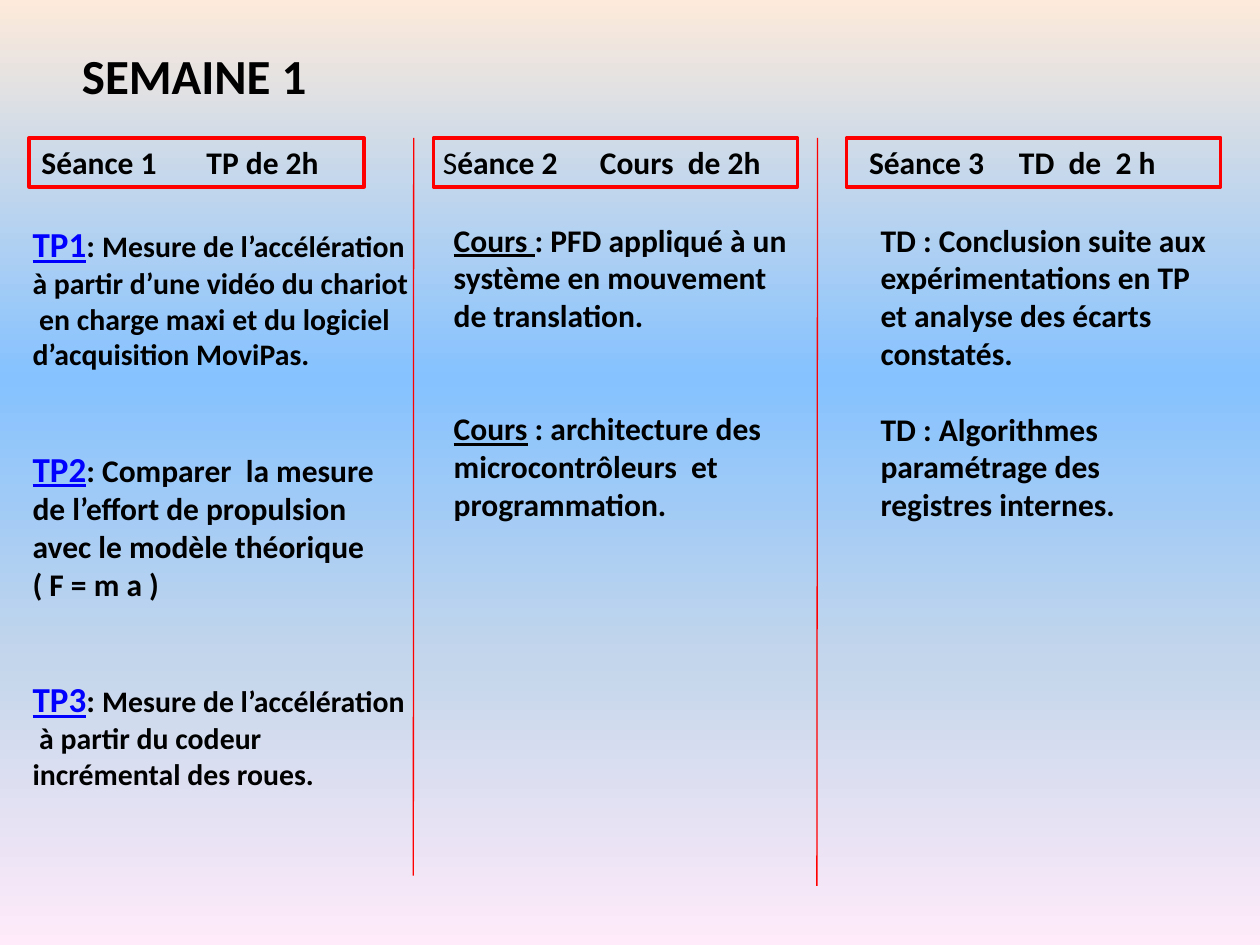
"""Build the week 1 planning slide with its three session columns."""
from lxml.etree import SubElement
from pptx import Presentation
from pptx.dml.color import RGBColor
from pptx.enum.shapes import MSO_CONNECTOR, MSO_SHAPE
from pptx.enum.text import MSO_ANCHOR, MSO_AUTO_SIZE, PP_ALIGN
from pptx.oxml.ns import qn
from pptx.util import Pt

COLORS = {"text": "000000", "link": "0000FF", "frame": "FF0000"}
GRADIENT = [(0, "FDEADA"), (40, "85C2FF"), (70, "C4D6EB"), (100, "FFEBFA")]
HEADER_TOP, HEADER_HEIGHT = 78.8, 28


def add_run(paragraph, text, size=18, color="text", bold=True, underline=False):
    if text == "\n":
        paragraph.add_line_break()
        return
    run = paragraph.add_run()
    run.text = text
    run.font.name = "Calibri"
    run.font.size = Pt(size)
    run.font.bold = bold
    run.font.underline = underline
    run.font.color.rgb = RGBColor.from_string(COLORS[color])


def set_frame(shape, anchor, wrap=True, left_margin=7.2):
    frame = shape.text_frame
    frame.auto_size = MSO_AUTO_SIZE.NONE
    frame.word_wrap = wrap
    frame.vertical_anchor = anchor
    frame.margin_left = Pt(left_margin)
    frame.margin_right = Pt(7.2)
    frame.margin_top = frame.margin_bottom = Pt(3.6)
    frame.paragraphs[0].alignment = PP_ALIGN.LEFT
    return frame


presentation = Presentation()
presentation.slide_width, presentation.slide_height = Pt(720), Pt(540)
slide = presentation.slides.add_slide(presentation.slide_layouts[5])

background = slide.background.fill
background.gradient()
background.gradient_angle = 270
stops = slide.element.find(".//" + qn("a:gsLst"))
for stop in list(stops):
    stops.remove(stop)
for position, color in GRADIENT:
    stop = SubElement(stops, qn("a:gs"), pos=str(position * 1000))
    SubElement(stop, qn("a:srgbClr"), val=color)

title = slide.shapes.title
title.left, title.top, title.width, title.height = Pt(39.6), Pt(22.3), Pt(168.5), Pt(41)
title_frame = set_frame(title, MSO_ANCHOR.TOP, wrap=False)
add_run(title_frame.paragraphs[0], "SEMAINE 1", 28)

link = {"size": 20, "color": "link", "underline": True}
small = {"size": 17}
heading = {"underline": True}
columns = [
    {
        "header": (16.6, 191.5, 7.2, 94.3),
        "header_runs": [("Séance 1\tTP de 2h", {})],
        "body": (11.5, 123.8, 229.7, 357),
        "paragraphs": [
            (0, [("TP1", link), (": ", {}),
                 ("Mesure de l’accélération à partir d’une vidéo du chariot", small),
                 ("\n", {}),
                 (" en charge maxi et du logiciel d’acquisition MoviPas.", small)]),
            (43, [("TP2", link), (": Comparer  la mesure de l’effort de propulsion", {}),
                  ("\n", {}), ("avec le modèle théorique", {})]),
            (0, [("( F = m a )", {})]),
            (43, [("TP3", link), (": ", {}), ("Mesure de l’accélération", small),
                  ("\n", {}),
                  (" à partir du codeur incrémental des roues.", small)]),
        ],
    },
    {
        "header": (247.7, 208, 5.4, 89.7),
        "header_runs": [("S", {"bold": False}), ("éance 2\tCours  de 2h", {})],
        "body": (252.2, 122.6, 213.8, 203.8),
        "paragraphs": [
            (0, [("Cours ", heading),
                 (": PFD appliqué à un système en mouvement de translation.", {})]),
            (43, [("Cours", heading),
                  (" : architecture des microcontrôleurs  et programmation.", {})]),
        ],
    },
    {
        "header": (483.8, 213.8, 12.8, 85.7),
        "header_runs": [("Séance 3\tTD  de  2 h", {})],
        "body": (496.1, 122.6, 202.3, 203.8),
        "paragraphs": [
            (0, [("TD : Conclusion suite aux expérimentations en TP "
                  "et analyse des écarts constatés.", {})]),
            (21.5, [("TD : Algorithmes", {})]),
            (0, [("paramétrage des registres internes.", {})]),
        ],
    },
]

for column in columns:
    left, width, margin, tab = column["header"]
    header = slide.shapes.add_shape(
        MSO_SHAPE.RECTANGLE, Pt(left), Pt(HEADER_TOP), Pt(width), Pt(HEADER_HEIGHT))
    header.shadow.inherit = False
    header.fill.background()
    header.line.color.rgb = RGBColor.from_string(COLORS["frame"])
    header.line.width = Pt(2)
    paragraph = set_frame(header, MSO_ANCHOR.MIDDLE, left_margin=margin).paragraphs[0]
    tabs = SubElement(paragraph._p.get_or_add_pPr(), qn("a:tabLst"))
    SubElement(tabs, qn("a:tab"), pos=str(int(Pt(tab))), algn="l")
    for text, style in column["header_runs"]:
        add_run(paragraph, text, **style)

    body = slide.shapes.add_textbox(*[Pt(length) for length in column["body"]])
    frame = set_frame(body, MSO_ANCHOR.TOP)
    for index, (gap, runs) in enumerate(column["paragraphs"]):
        paragraph = frame.add_paragraph() if index else frame.paragraphs[0]
        paragraph.space_before = Pt(gap)
        for text, style in runs:
            add_run(paragraph, text, **style)

for top_x, bottom_x, bottom in [(236.4, 236.2, 500.4), (467.2, 466.8, 506.2)]:
    separator = slide.shapes.add_connector(
        MSO_CONNECTOR.STRAIGHT, Pt(top_x), Pt(HEADER_TOP), Pt(bottom_x), Pt(bottom))
    separator.line.color.rgb = RGBColor.from_string(COLORS["frame"])
    separator.line.width = Pt(0.75)
    SubElement(separator._element.spPr, qn("a:effectLst"))

presentation.save("out.pptx")
